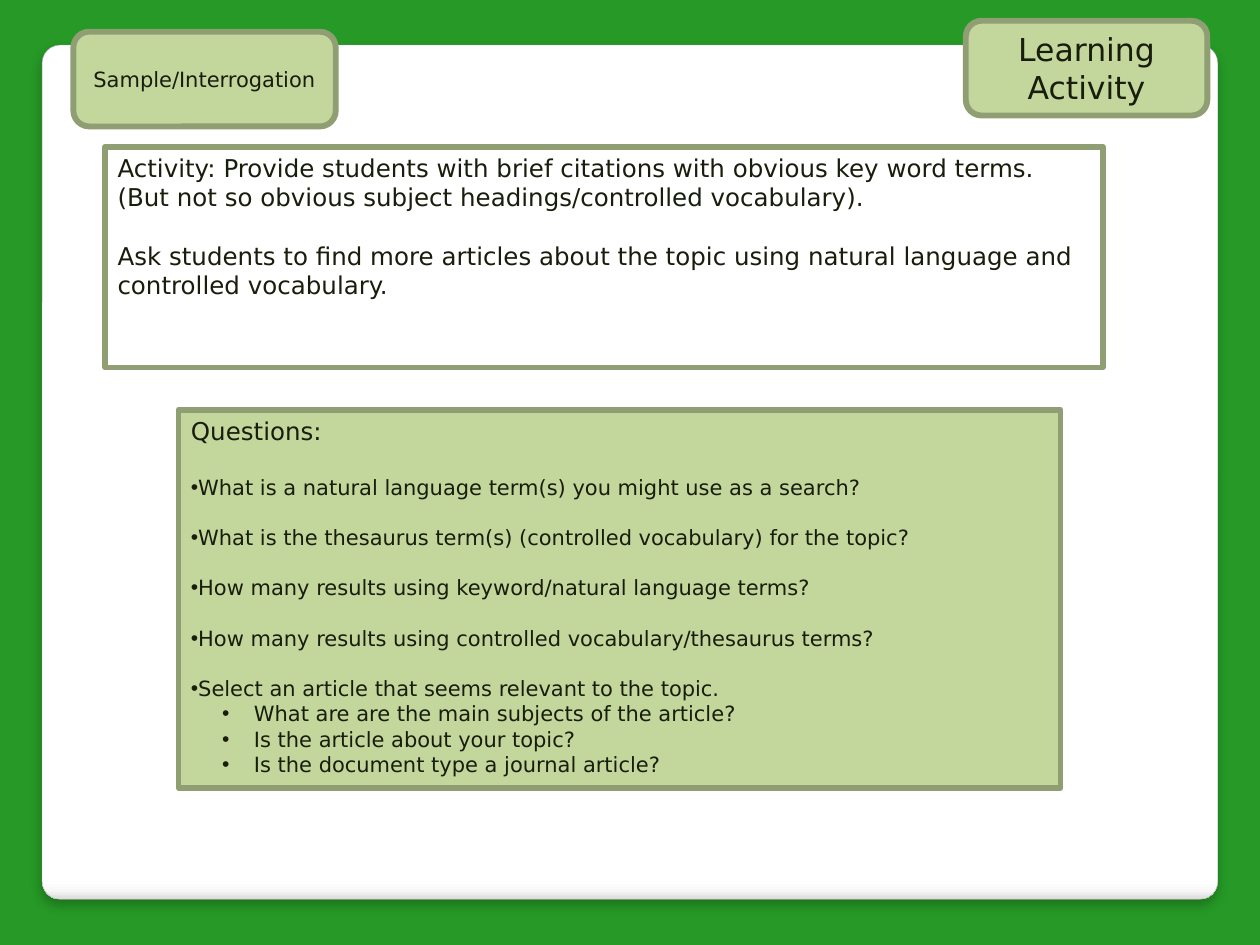
from lxml import etree
from pptx import Presentation
from pptx.dml.color import RGBColor
from pptx.enum.shapes import MSO_SHAPE as Shape
from pptx.enum.text import MSO_ANCHOR as Anchor, PP_ALIGN as Align
from pptx.oxml import parse_xml
from pptx.oxml.ns import nsdecls, qn
from pptx.util import Cm, Pt

COLORS = {
    "backdrop": "269926",
    "sheet": "FFFFFF",
    "sheet_line": "A4A4A4",
    "panel": "C3D69B",
    "border": "909E73",
    "text": "181D0C",
}
SHEET_STOPS = [(0, "FFFFFF"), (98, "FFFFFF"), (99, "F7F7F7"), (100, "DADADA")]
FONT = "DejaVu Sans"


def rgb(name):
    return RGBColor.from_string(COLORS[name])


def write(paragraph, text, size=12, align=Align.LEFT, before=0, bullet=False,
          margin=0, hanging=0):
    """Fill one paragraph with formatted text; margin and hanging are in cm."""
    if bullet:
        props = paragraph._p.get_or_add_pPr()
        props.set("marL", str(Cm(margin)))
        props.set("indent", str(-Cm(hanging)))
        etree.SubElement(props, qn("a:buFont")).set("typeface", "Arial")
        etree.SubElement(props, qn("a:buChar")).set("char", "•")
    paragraph.alignment = align
    if before:
        paragraph.space_before = Pt(before)
    run = paragraph.add_run()
    run.text = text
    run.font.size = Pt(size)
    run.font.name = FONT
    run.font.color.rgb = rgb("text")


class ActivitySlide:
    """Holds the slide and the look of its parts."""

    def __init__(self, deck):
        self.slide = deck.slides.add_slide(deck.slide_layouts[6])
        self.border_width = Pt(3.35)
        background = self.slide.background.fill
        background.solid()
        background.fore_color.rgb = rgb("backdrop")

    def shape(self, kind, box, fill, line, width):
        item = self.slide.shapes.add_shape(kind, *(Cm(n) for n in box))
        item.shadow.inherit = False
        item.fill.solid()
        item.fill.fore_color.rgb = rgb(fill)
        item.line.color.rgb = rgb(line)
        item.line.width = width
        return item

    def sheet(self, box):
        """White rounded page with a shaded lower edge and a soft shadow."""
        page = self.shape(Shape.ROUNDED_RECTANGLE, box, "sheet", "sheet_line", Pt(0.16))
        page.adjustments[0] = 0.021
        props = page._element.spPr
        stops = "".join(
            f'<a:gs pos="{pos * 1000}"><a:srgbClr val="{color}"/></a:gs>'
            for pos, color in SHEET_STOPS)
        gradient = parse_xml(
            f'<a:gradFill {nsdecls("a")} rotWithShape="1"><a:gsLst>{stops}</a:gsLst>'
            '<a:lin ang="5400000" scaled="0"/></a:gradFill>')
        props.replace(props.find(qn("a:solidFill")), gradient)
        shadow = parse_xml(
            f'<a:outerShdw {nsdecls("a")} blurRad="{Pt(6)}" dist="{Pt(4)}" '
            'dir="5400000" rotWithShape="0"><a:srgbClr val="000000">'
            '<a:alpha val="25000"/></a:srgbClr></a:outerShdw>')
        props.find(qn("a:effectLst")).append(shadow)

    def panel(self, box, lines, fill="panel", kind=Shape.RECTANGLE, anchor=Anchor.TOP):
        """Bordered box; each line is a text with its format."""
        frame = self.shape(kind, box, fill, "border", self.border_width).text_frame
        frame.word_wrap = True
        frame.vertical_anchor = anchor
        for number, (text, style) in enumerate(lines):
            paragraph = frame.add_paragraph() if number else frame.paragraphs[0]
            write(paragraph, text, **style)

    def tag(self, box, text, size):
        self.panel(box, [(text, dict(size=size, align=Align.CENTER))],
                   kind=Shape.ROUNDED_RECTANGLE, anchor=Anchor.MIDDLE)


def main():
    deck = Presentation()
    deck.slide_width, deck.slide_height = Cm(25.4), Cm(19.05)
    activity = ActivitySlide(deck)
    activity.sheet((0.85, 0.91, 23.7, 17.22))

    # Activity description
    body = dict(size=14)
    activity.panel((2.12, 2.96, 20.11, 4.45), [
        ("Activity: Provide students with brief citations with obvious key word terms.", body),
        ("(But not so obvious subject headings/controlled vocabulary).", body),
        ("Ask students to find more articles about the topic using natural language and",
         dict(size=14, before=16.5)),
        ("controlled vocabulary.", body),
    ], fill="sheet")

    # Corner label
    activity.tag((19.47, 0.42, 4.87, 1.91), "Learning Activity", 18)

    # Questions, with checks on the chosen article
    questions = [
        "What is a natural language term(s) you might use as a search?",
        "What is the thesaurus term(s) (controlled vocabulary) for the topic?",
        "How many results using keyword/natural language terms?",
        "How many results using controlled vocabulary/thesaurus terms?",
        "Select an article that seems relevant to the topic.",
    ]
    article_checks = [
        "What are are the main subjects of the article?",
        "Is the article about your topic?",
        "Is the document type a journal article?",
    ]
    lines = [("Questions:", body)]
    lines += [(text, dict(bullet=True, before=14.4 if number else 16.5))
              for number, text in enumerate(questions)]
    lines += [(text, dict(bullet=True, margin=1.27, hanging=0.64))
              for text in article_checks]
    activity.panel((3.6, 8.26, 17.78, 7.62), lines)

    # Section label
    activity.tag((1.48, 0.64, 5.29, 1.91), "Sample/Interrogation", 12)

    deck.save("out.pptx")


if __name__ == "__main__":
    main()
